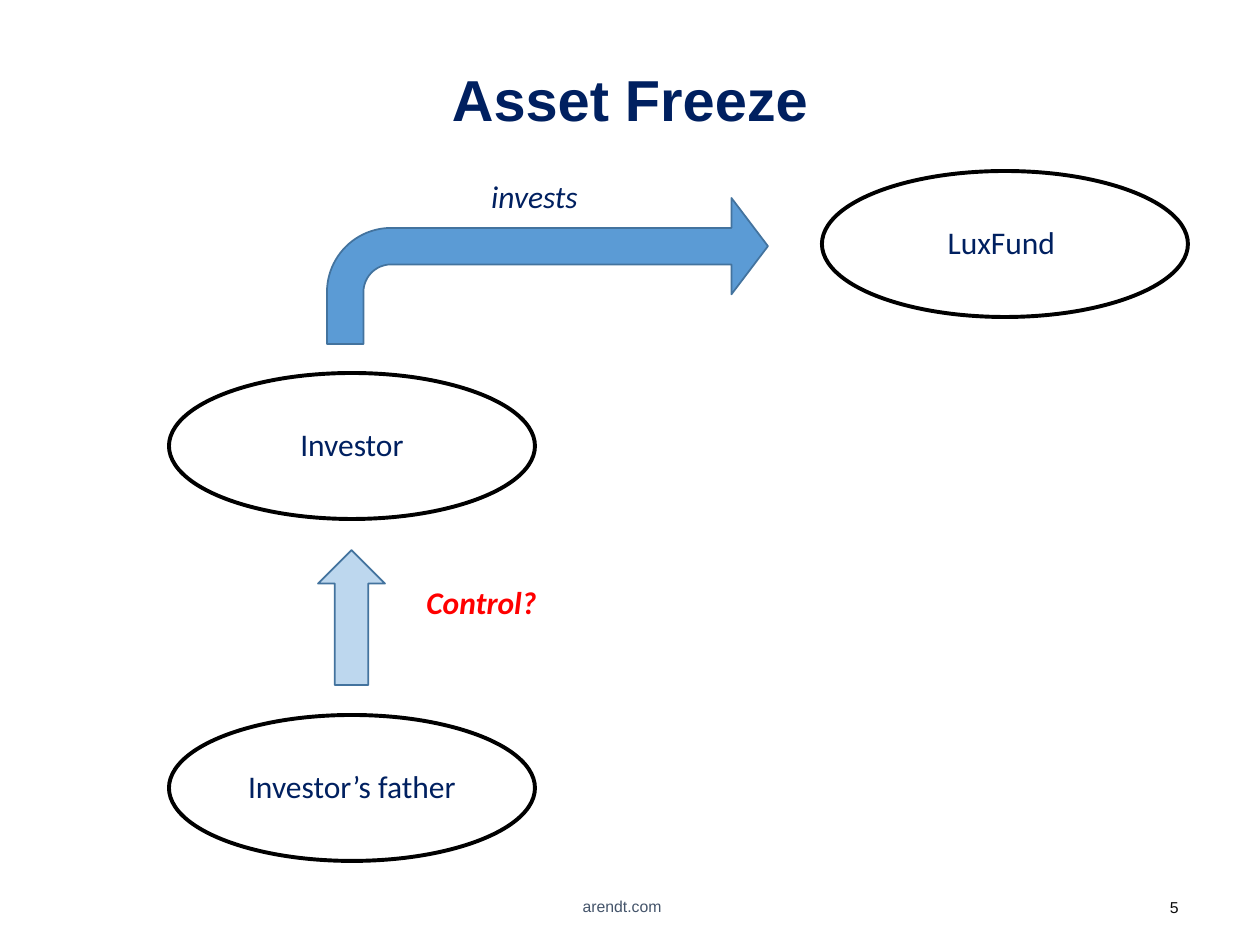
from dataclasses import dataclass

from pptx import Presentation
from pptx.dml.color import RGBColor
from pptx.enum.shapes import MSO_SHAPE as Kind
from pptx.enum.text import MSO_ANCHOR as Anchor, PP_ALIGN as Align
from pptx.util import Emu, Pt

SCALE = 914400 / 126
HUES = {
    "navy": "002060",
    "slate": "44546A",
    "ink": "0C0C0C",
    "black": "000000",
    "red": "FF0000",
    "blue": "5B9BD5",
    "pale": "BDD7EE",
    "edge": "43739E",
}


@dataclass
class Box:
    x: int
    y: int
    w: int
    h: int

    def emu(self) -> list[Emu]:
        return [px(n) for n in (self.x, self.y, self.w, self.h)]


@dataclass
class Style:
    size: int = 18
    face: str = "Calibri"
    hue: str = "navy"
    bold: bool = False
    slant: bool = False
    align: Align = Align.CENTER
    anchor: Anchor = Anchor.TOP
    lead: float = 1.0


@dataclass
class Label:
    text: str
    box: Box
    style: Style


@dataclass
class Arrow:
    kind: Kind
    box: Box
    fill: str
    turn: int = 0
    adjust: tuple[float, ...] = ()


def px(n: int) -> Emu:
    return Emu(round(n * SCALE))


def rgb(hue: str) -> RGBColor:
    return RGBColor.from_string(HUES[hue])


def write(shape, text: str, style: Style) -> None:
    frame = shape.text_frame
    frame.word_wrap = True
    frame.vertical_anchor = style.anchor
    para = frame.paragraphs[0]
    para.text = text
    para.alignment = style.align
    para.line_spacing = style.lead
    font = para.font
    font.name, font.size = style.face, Pt(style.size)
    font.bold, font.italic = style.bold, style.slant
    font.color.rgb = rgb(style.hue)


def add_label(slide, label: Label) -> None:
    write(slide.shapes.add_textbox(*label.box.emu()), label.text, label.style)


def add_party(slide, party: Label) -> None:
    oval = slide.shapes.add_shape(Kind.OVAL, *party.box.emu())
    oval.shadow.inherit = False
    oval.fill.background()
    oval.line.color.rgb = rgb("black")
    oval.line.width = Pt(2.25)
    write(oval, party.text, party.style)


def add_arrow(slide, arrow: Arrow) -> None:
    shape = slide.shapes.add_shape(arrow.kind, *arrow.box.emu())
    shape.shadow.inherit = False
    shape.rotation = arrow.turn
    for i, value in enumerate(arrow.adjust):
        shape.adjustments[i] = value
    shape.fill.solid()
    shape.fill.fore_color.rgb = rgb(arrow.fill)
    shape.line.color.rgb = rgb("edge")
    shape.line.width = Pt(1)


OVAL = Style(anchor=Anchor.MIDDLE, lead=0.9)
HEAD = Style(33, "Arial", bold=True, anchor=Anchor.MIDDLE, lead=0.9)
PARTIES = [
    Label(text, Box(x, y, 366, 146), OVAL)
    for text, x, y in (
        ("LuxFund ", 822, 171),
        ("Investor", 169, 373),
        ("Investor’s father", 169, 715),
    )
]
ARROWS = [
    Arrow(Kind.BENT_ARROW, Box(327, 198, 441, 146), "blue",
          adjust=(0.25, 0.33, 0.25, 0.44)),
    Arrow(Kind.DOWN_ARROW, Box(318, 550, 67, 135), "pale", turn=180),
]
LABELS = [
    Label("invests", Box(418, 171, 233, 50), Style(slant=True)),
    Label("Control?", Box(414, 577, 510, 50),
          Style(hue="red", bold=True, slant=True, align=Align.LEFT)),
    Label("arendt.com", Box(517, 885, 210, 43),
          Style(9, "Arial", "slate", anchor=Anchor.MIDDLE)),
    Label("5", Box(1131, 892, 60, 37),
          Style(9, "Arial", "ink", align=Align.RIGHT)),
]


def main() -> None:
    deck = Presentation()
    deck.slide_width, deck.slide_height = px(1260), px(945)
    slide = deck.slides.add_slide(deck.slide_layouts[5])
    title = slide.shapes.title
    title.left, title.top, title.width, title.height = Box(87, 50, 1086, 105).emu()
    write(title, "Asset Freeze", HEAD)
    for party in PARTIES:
        add_party(slide, party)
    for arrow in ARROWS:
        add_arrow(slide, arrow)
    for label in LABELS:
        add_label(slide, label)
    deck.save("out.pptx")


if __name__ == "__main__":
    main()
